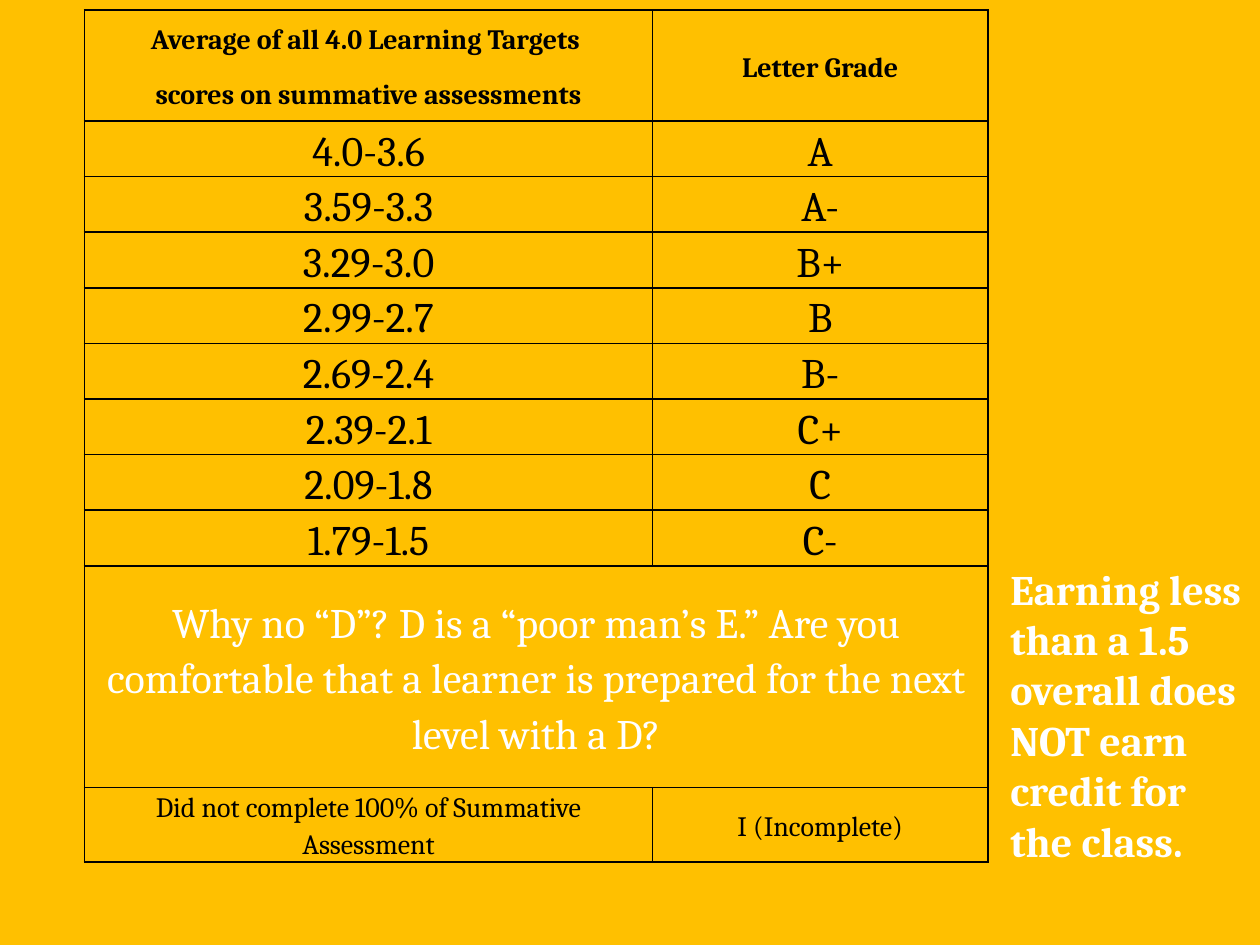
from lxml import etree
from pptx import Presentation
from pptx.dml.color import RGBColor
from pptx.enum.text import MSO_ANCHOR, MSO_AUTO_SIZE, PP_ALIGN
from pptx.oxml.ns import qn
from pptx.util import Inches, Pt

CENTER = PP_ALIGN.CENTER
MIDDLE = MSO_ANCHOR.MIDDLE
GROW = MSO_AUTO_SIZE.SHAPE_TO_FIT_TEXT
COLORS = {"background": "FFC000", "text": "000000", "accent": "FFFFFF", "border": "000000"}
BLANK_LAYOUT = 6

HEADINGS = [
    ["Average of all 4.0 Learning Targets ", "scores on summative assessments"],
    ["Letter Grade"],
]
GRADES = [
    ("4.0-3.6", "A"),
    ("3.59-3.3", "A-"),
    ("3.29-3.0", "B+"),
    ("2.99-2.7", "B"),
    ("2.69-2.4", "B-"),
    ("2.39-2.1", "C+"),
    ("2.09-1.8", "C"),
    ("1.79-1.5", "C-"),
]
QUESTION = (
    "Why no “D”? D is a “poor man’s E.” Are you comfortable that "
    "a learner is prepared for the next level with a D?"
)
INCOMPLETE = ("Did not complete 100% of Summative Assessment", "I (Incomplete)")
CREDIT_NOTE = "Earning less than a 1.5 overall does NOT earn credit for the class."


class SlideBuilder:
    font = "Cambria"

    def __init__(self, page):
        self.page = page

    def background(self, color):
        fill = self.page.background.fill
        fill.solid()
        fill.fore_color.rgb = RGBColor.from_string(COLORS[color])

    def span(self, para, text, size, color="text", bold=False):
        span = para.add_run()
        span.text = text
        span.font.name = self.font
        span.font.size = Pt(size)
        span.font.bold = bold
        span.font.color.rgb = RGBColor.from_string(COLORS[color])

    def table(self, left, top, widths, heights):
        frame = self.page.shapes.add_table(
            len(heights), len(widths), Inches(left), Inches(top),
            Inches(sum(widths)), Inches(sum(heights)),
        )
        table = frame.table
        table.first_row = False
        table.horz_banding = False
        for column, width in zip(table.columns, widths):
            column.width = Inches(width)
        for row, height in zip(table.rows, heights):
            row.height = Inches(height)
        for cell in table.iter_cells():
            self.borders(cell)
            cell.fill.background()
            cell.vertical_anchor = MIDDLE
            cell.margin_left = cell.margin_right = Inches(0.07)
            cell.margin_top = cell.margin_bottom = 0
        return table

    def borders(self, cell):
        properties = cell._tc.get_or_add_tcPr()
        for side in ("lnL", "lnR", "lnT", "lnB"):
            line = etree.SubElement(properties, qn(f"a:{side}"), w=str(Pt(1)))
            fill = etree.SubElement(line, qn("a:solidFill"))
            etree.SubElement(fill, qn("a:srgbClr"), val=COLORS["border"])

    def cell_text(self, cell, lines, size, color="text", bold=False):
        frame = cell.text_frame
        for index, line in enumerate(lines):
            para = frame.add_paragraph() if index else frame.paragraphs[0]
            para.alignment = CENTER
            para.line_spacing = 1.15
            para.space_after = Pt(10)
            self.span(para, line, size, color, bold)

    def text(self, left, top, width, height, content, size, color, bold):
        box = self.page.shapes.add_textbox(
            Inches(left), Inches(top), Inches(width), Inches(height)
        )
        box.text_frame.word_wrap = True
        box.text_frame.auto_size = GROW
        self.span(box.text_frame.paragraphs[0], content, size, color, bold)


def main():
    deck = Presentation()
    deck.slide_width = Inches(10)
    deck.slide_height = Inches(7.5)
    builder = SlideBuilder(deck.slides.add_slide(deck.slide_layouts[BLANK_LAYOUT]))
    builder.background("background")

    heights = [0.88] + [0.44] * len(GRADES) + [1.76, 0.59]
    table = builder.table(0.67, 0.08, [4.51, 2.66], heights)
    for column, lines in enumerate(HEADINGS):
        builder.cell_text(table.cell(0, column), lines, 16, bold=True)
    for row, grade in enumerate(GRADES, start=1):
        for column, value in enumerate(grade):
            builder.cell_text(table.cell(row, column), [value], 24)

    last_row = len(heights) - 1
    question = table.cell(last_row - 1, 0)
    question.merge(table.cell(last_row - 1, 1))
    builder.cell_text(question, [QUESTION], 24, "accent")
    for column, value in enumerate(INCOMPLETE):
        builder.cell_text(table.cell(last_row, column), [value], 16)

    builder.text(7.92, 4.42, 2.09, 2.52, CREDIT_NOTE, 24, "accent", True)
    deck.save("out.pptx")


if __name__ == "__main__":
    main()
